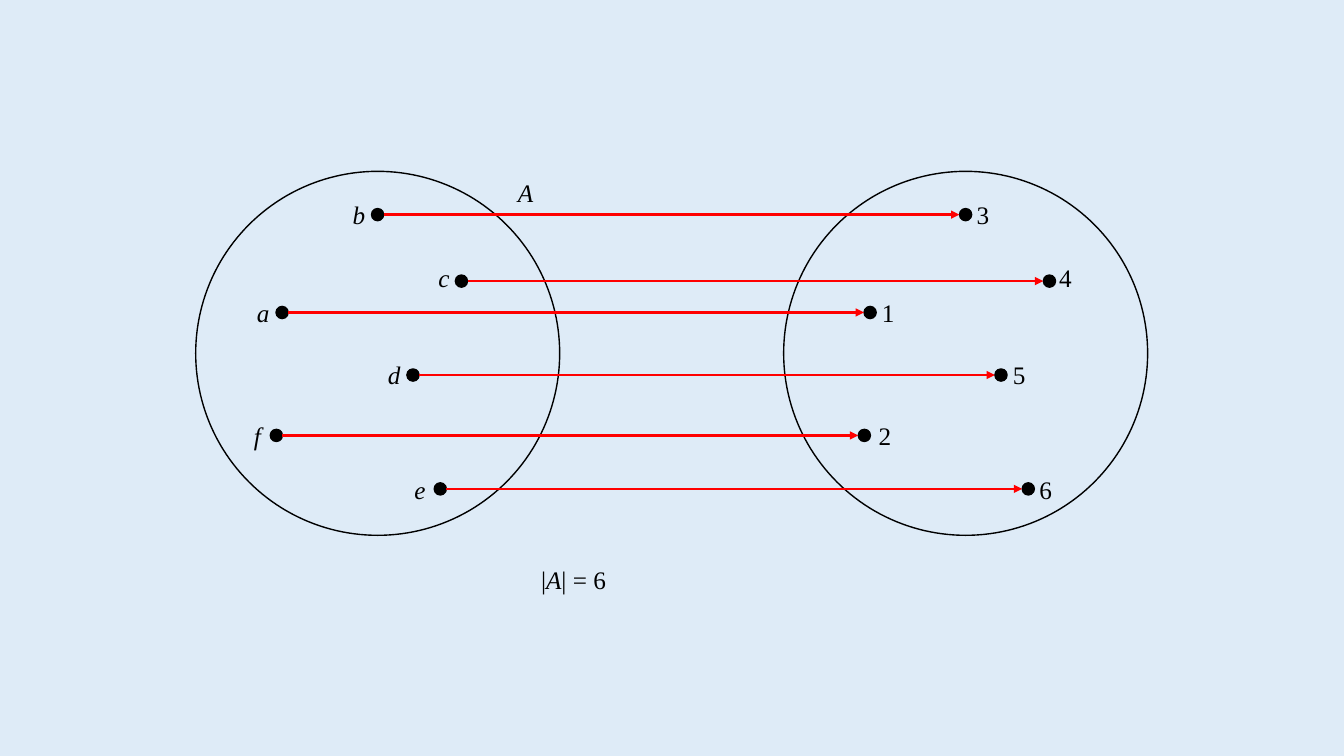
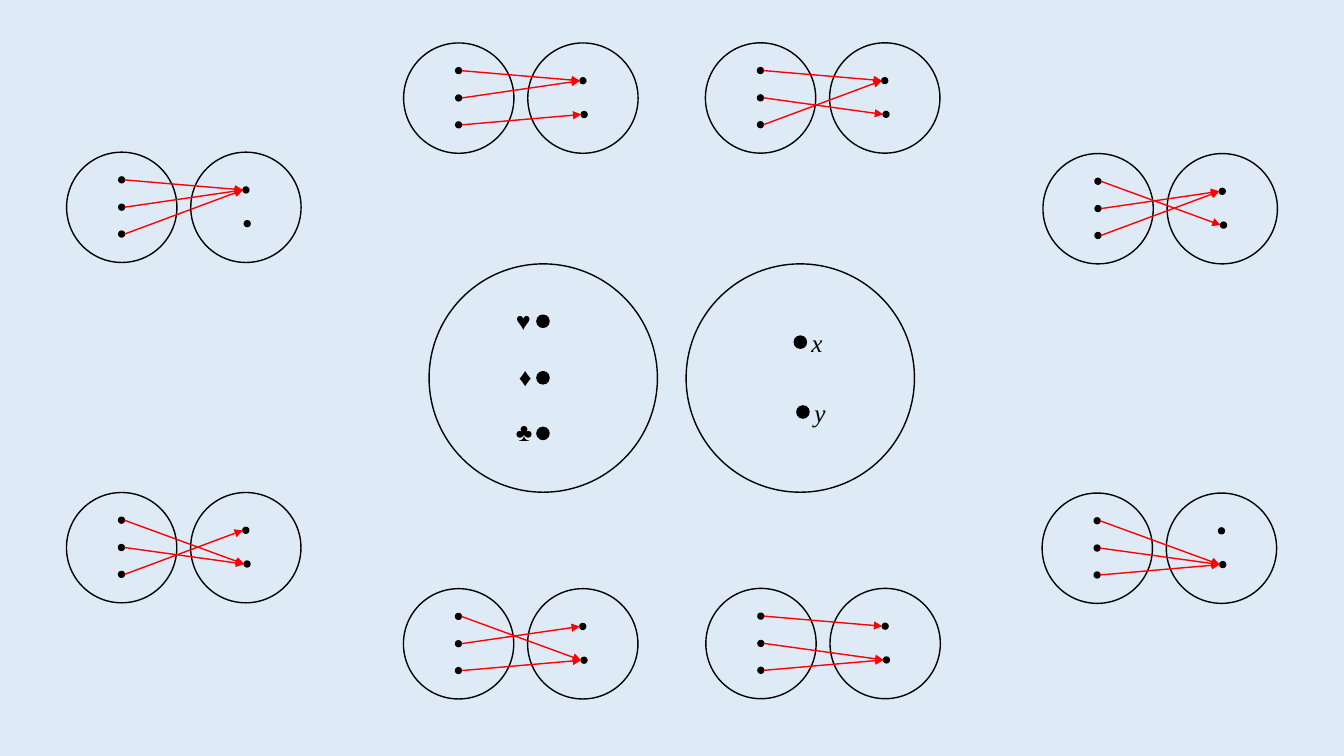
from lxml import etree
from pptx import Presentation
from pptx.dml.color import RGBColor
from pptx.enum import shapes, text
from pptx.oxml import ns
from pptx.util import Pt

COLORS = {"background": "DEEBF7", "ink": "000000", "arrow": "FF0000"}
FONT = "Times New Roman"
LABEL_HEIGHT = 29

SET_LEFT, SET_TOP, SET_SIZE, SET_PITCH = 139.8, 122.4, 260, 420
DOT = 8.7
PAIRS = [
    {"names": ("a", "1"), "dot": (201.5, 223.2), "lefts": (176.4, 622.8), "top": 208.8},
    {"names": ("b", "3"), "dot": (269.7, 153.3), "lefts": (244.8, 690.5), "top": 139},
    {"names": ("c", "4"), "dot": (329.6, 200.8), "lefts": (306, 749.5), "top": 183.6, "width": 19},
    {"names": ("d", "5"), "dot": (295, 267.9), "lefts": (270, 716.4), "top": 253.4, "width": 22},
    {"names": ("e", "6"), "dot": (314.5, 349.2), "lefts": (287.3, 734.4), "top": 335.5,
     "align": text.PP_ALIGN.CENTER},
    {"names": ("f", "2"), "dot": (197.4, 311), "lefts": (174.2, 620.6), "top": 296.6},
]

SMALL_SET, SMALL_PITCH, SMALL_DOT = 78.8, 88.7, 4.2
DOMAIN = [(39.3, 19.8), (39.3, 39.3), (39.3, 58.5)]
CODOMAIN = [(128.1, 27), (129, 51.1)]
CENTER_MAP = {"left": 306.5, "top": 188.5, "scale": 2.07}
FUNCTIONS = [
    (47.6, 108.7, (0, 0, 0)),
    (288.3, 30.7, (0, 0, 1)),
    (503.9, 30.6, (0, 1, 0)),
    (745, 109.7, (1, 0, 0)),
    (47.5, 351.8, (1, 1, 0)),
    (288.2, 420.5, (1, 0, 1)),
    (504.2, 420.3, (0, 1, 1)),
    (744.4, 352.2, (1, 1, 1)),
]
ELEMENTS = [
    ("♥", 361.4, 214.6, False),
    ("♦", 363.6, 254.2, False),
    ("♣", 361.4, 293.8, False),
    ("x", 572.4, 230.4, True),
    ("y", 574.6, 280.1, True),
]


def rgb(name):
    return RGBColor.from_string(COLORS[name])


def new_slide(prs):
    s = prs.slides.add_slide(prs.slide_layouts[6])
    fill = s.background.fill
    fill.solid()
    fill.fore_color.rgb = rgb("background")
    return s


def add_text(s, runs, left, top, width=25.2, align=text.PP_ALIGN.LEFT, size=18):
    tf = s.shapes.add_textbox(Pt(left), Pt(top), Pt(width), Pt(LABEL_HEIGHT)).text_frame
    tf.word_wrap = True
    p = tf.paragraphs[0]
    p.alignment = align
    for content, italic in runs:
        r = p.add_run()
        r.text = content
        r.font.name = FONT
        r.font.size = Pt(size)
        r.font.italic = italic
        r.font.color.rgb = rgb("ink")


def add_circle(s, left, top, size, filled=False):
    sp = s.shapes.add_shape(shapes.MSO_SHAPE.OVAL, Pt(left), Pt(top), Pt(size), Pt(size))
    sp.shadow.inherit = False
    sp.line.color.rgb = rgb("ink")
    sp.line.width = Pt(1)
    if filled:
        sp.fill.solid()
        sp.fill.fore_color.rgb = rgb("ink")
    else:
        sp.fill.background()


def add_dot(s, center, size):
    x, y = center
    add_circle(s, x - size / 2, y - size / 2, size, filled=True)


def add_arrow(s, start, end, dot, width):
    (x1, y1), (x2, y2) = start, end
    c = s.shapes.add_connector(shapes.MSO_CONNECTOR.STRAIGHT,
                               Pt(x1 + dot / 2), Pt(y1), Pt(x2 - dot / 2), Pt(y2))
    c.line.color.rgb = rgb("arrow")
    c.line.width = Pt(width)
    etree.SubElement(c.line._get_or_add_ln(), ns.qn("a:tailEnd"), type="triangle")
    etree.SubElement(c._element.spPr, ns.qn("a:effectLst"))


def add_map(s, left, top, targets=(), scale=1):
    def place(points):
        return [(left + x * scale, top + y * scale) for x, y in points]

    for i in range(2):
        add_circle(s, left + i * SMALL_PITCH * scale, top, SMALL_SET * scale)
    inputs, outputs = place(DOMAIN), place(CODOMAIN)
    for center in inputs + outputs:
        add_dot(s, center, SMALL_DOT * scale)
    for start, target in zip(inputs, targets):
        add_arrow(s, start, outputs[target], SMALL_DOT * scale, 1)


def build_cardinality(prs):
    s = new_slide(prs)
    for i in range(2):
        add_circle(s, SET_LEFT + i * SET_PITCH, SET_TOP, SET_SIZE)
    add_text(s, [("A", True)], 362.9, 123.1)
    add_text(s, [("|", False), ("A", True), ("| = 6", False)], 379.4, 399.6, width=69)
    for pair in PAIRS:
        x, y = pair["dot"]
        ends = [(x, y), (x + SET_PITCH, y)]
        for center, name, left in zip(ends, pair["names"], pair["lefts"]):
            add_dot(s, center, DOT)
            add_text(s, [(name, name.isalpha())], left, pair["top"],
                     width=pair.get("width", 25.2),
                     align=pair.get("align", text.PP_ALIGN.LEFT))
        add_arrow(s, *ends, DOT, 1.75)


def build_functions(prs):
    s = new_slide(prs)
    add_map(s, **CENTER_MAP)
    for name, left, top, italic in ELEMENTS:
        add_text(s, [(name, italic)], left, top)
    for left, top, targets in FUNCTIONS:
        add_map(s, left, top, targets)


def main():
    prs = Presentation()
    prs.slide_width, prs.slide_height = Pt(960), Pt(540)
    build_cardinality(prs)
    build_functions(prs)
    prs.save("out.pptx")


if __name__ == "__main__":
    main()
